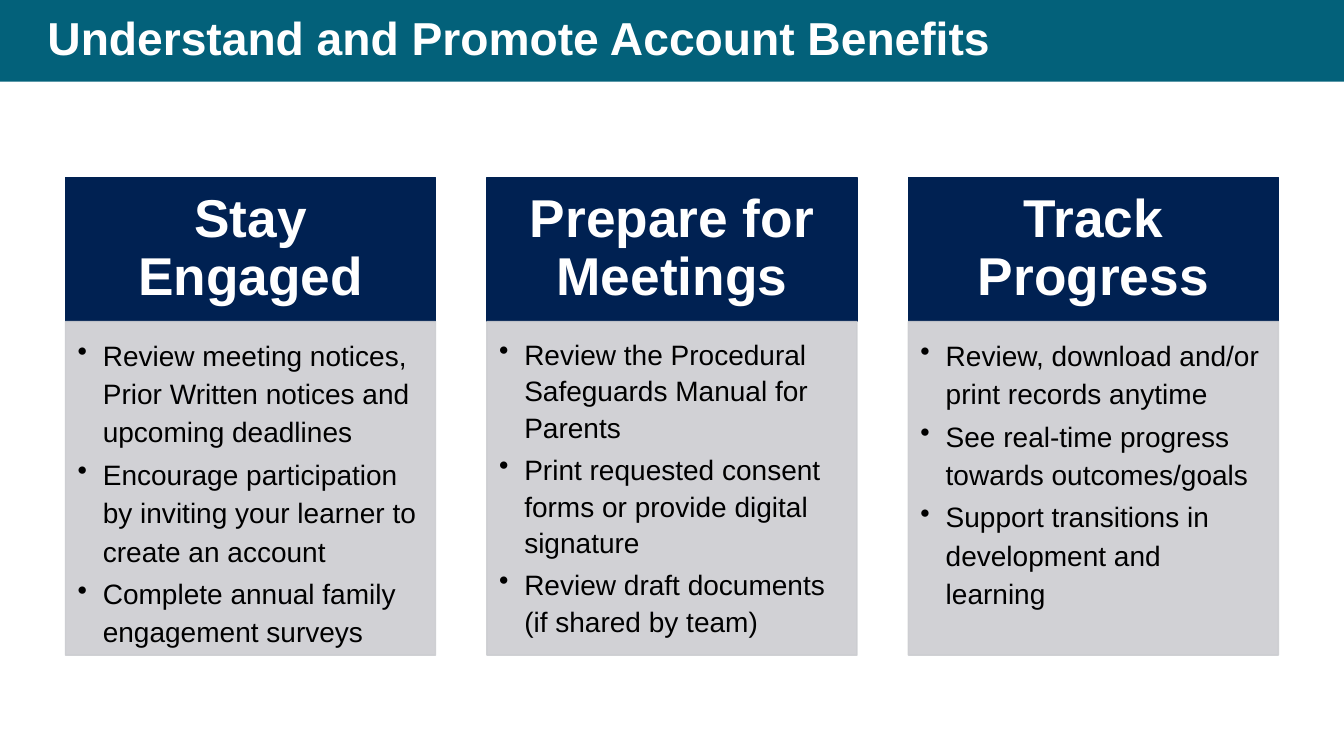
import lxml.etree
import pptx
import pptx.util
import pptx.dml.color
import pptx.enum.shapes
import pptx.enum.text
import pptx.oxml.ns
from dataclasses import dataclass

Inches = pptx.util.Inches
Pt = pptx.util.Pt
ALIGN = pptx.enum.text.PP_ALIGN
ANCHOR = pptx.enum.text.MSO_ANCHOR


@dataclass(frozen=True)
class Theme:
    font: str = "Arial"
    teal: str = "03617A"
    navy: str = "002152"
    gray: str = "CCCDD1"
    white: str = "FFFFFF"
    black: str = "000000"
    title: int = 33
    head: int = 38
    body: int = 20


THEME = Theme()

# Card heading, line spacing of its list, list items
CARDS = [
    ("Stay Engaged", 1.14, [
        "Review meeting notices, Prior Written notices and upcoming deadlines",
        "Encourage participation by inviting your learner to create an account",
        "Complete annual family engagement surveys",
    ]),
    ("Prepare for Meetings", 1.1, [
        "Review the Procedural Safeguards Manual for Parents",
        "Print requested consent forms or provide digital signature",
        "Review draft documents (if shared by team)",
    ]),
    ("Track Progress", 1.14, [
        "Review, download and/or print records anytime",
        "See real-time progress towards outcomes/goals",
        "Support transitions in development and learning",
    ]),
]
LEFT, TOP, STEP, WIDTH = 0.65, 1.76, 4.18, 3.67
HEAD, BODY = 1.43, 3.31
BAR = 0.81


def rgb(code):
    return pptx.dml.color.RGBColor.from_string(code)


def style(para, size, color, bold=False):
    font = para.font
    font.name, font.size, font.bold = THEME.font, Pt(size), bold
    font.color.rgb = rgb(color)


def add_box(slide, left, top, width, height, color, line=True):
    box = slide.shapes.add_shape(
        pptx.enum.shapes.MSO_SHAPE.RECTANGLE,
        Inches(left), Inches(top), Inches(width), Inches(height))
    box.shadow.inherit = False
    box.fill.solid()
    box.fill.fore_color.rgb = rgb(color)
    if line:
        box.line.color.rgb = rgb(color)
        box.line.width = Pt(1)
    else:
        box.line.fill.background()
    return box


def set_frame(box, anchor, left, top, right, bottom):
    frame = box.text_frame
    frame.word_wrap = True
    frame.vertical_anchor = anchor
    frame.margin_left, frame.margin_top = Inches(left), Inches(top)
    frame.margin_right, frame.margin_bottom = Inches(right), Inches(bottom)
    return frame


def add_node(parent, tag, key, value):
    node = lxml.etree.SubElement(parent, pptx.oxml.ns.qn(tag))
    node.set(key, value)


def set_alpha(box, percent):
    for color in box.element.spPr.findall(".//" + pptx.oxml.ns.qn("a:srgbClr")):
        add_node(color, "a:alpha", "val", str(percent * 1000))


def add_bullet(para):
    props = para._p.get_or_add_pPr()
    props.set("marL", str(Inches(0.25)))
    props.set("indent", str(Inches(-0.25)))
    add_node(props, "a:buChar", "char", "•")


def add_title(slide, text):
    title = slide.shapes.title
    title.left, title.top = Inches(0.37), Inches(0)
    title.width, title.height = Inches(12.32), Inches(BAR)
    frame = set_frame(title, ANCHOR.MIDDLE, 0.1, 0.05, 0.1, 0.05)
    frame.text = text
    para = frame.paragraphs[0]
    para.alignment = ALIGN.LEFT
    para.line_spacing = 0.9
    style(para, THEME.title, THEME.white, True)
    # Band behind the title
    band = add_box(slide, 0, 0, 13.33, BAR, THEME.teal, line=False)
    title.element.addprevious(band.element)


def add_head(slide, left, text):
    box = add_box(slide, left, TOP, WIDTH, HEAD, THEME.navy)
    frame = set_frame(box, ANCHOR.MIDDLE, 0.3, 0.17, 0.3, 0.17)
    frame.text = text
    para = frame.paragraphs[0]
    para.alignment = ALIGN.CENTER
    para.line_spacing = 0.9
    style(para, THEME.head, THEME.white, True)


def add_list(slide, left, items, space):
    box = add_box(slide, left, TOP + HEAD, WIDTH, BODY, THEME.gray)
    set_alpha(box, 90)
    frame = set_frame(box, ANCHOR.TOP, 0.12, 0.12, 0.16, 0.17)
    for i, item in enumerate(items):
        para = frame.add_paragraph() if i else frame.paragraphs[0]
        para.text = item
        para.level = 1
        add_bullet(para)
        para.alignment = ALIGN.LEFT
        para.line_spacing = space
        para.space_after = Pt(3)
        style(para, THEME.body, THEME.black)


def main():
    deck = pptx.Presentation()
    deck.slide_width, deck.slide_height = Inches(13.33), Inches(7.5)
    slide = deck.slides.add_slide(deck.slide_layouts[5])
    add_title(slide, "Understand and Promote Account Benefits")
    # Three cards at an equal step
    for i, (head, space, items) in enumerate(CARDS):
        left = LEFT + i * STEP
        add_head(slide, left, head)
        add_list(slide, left, items, space)
    deck.save("out.pptx")


if __name__ == "__main__":
    main()
